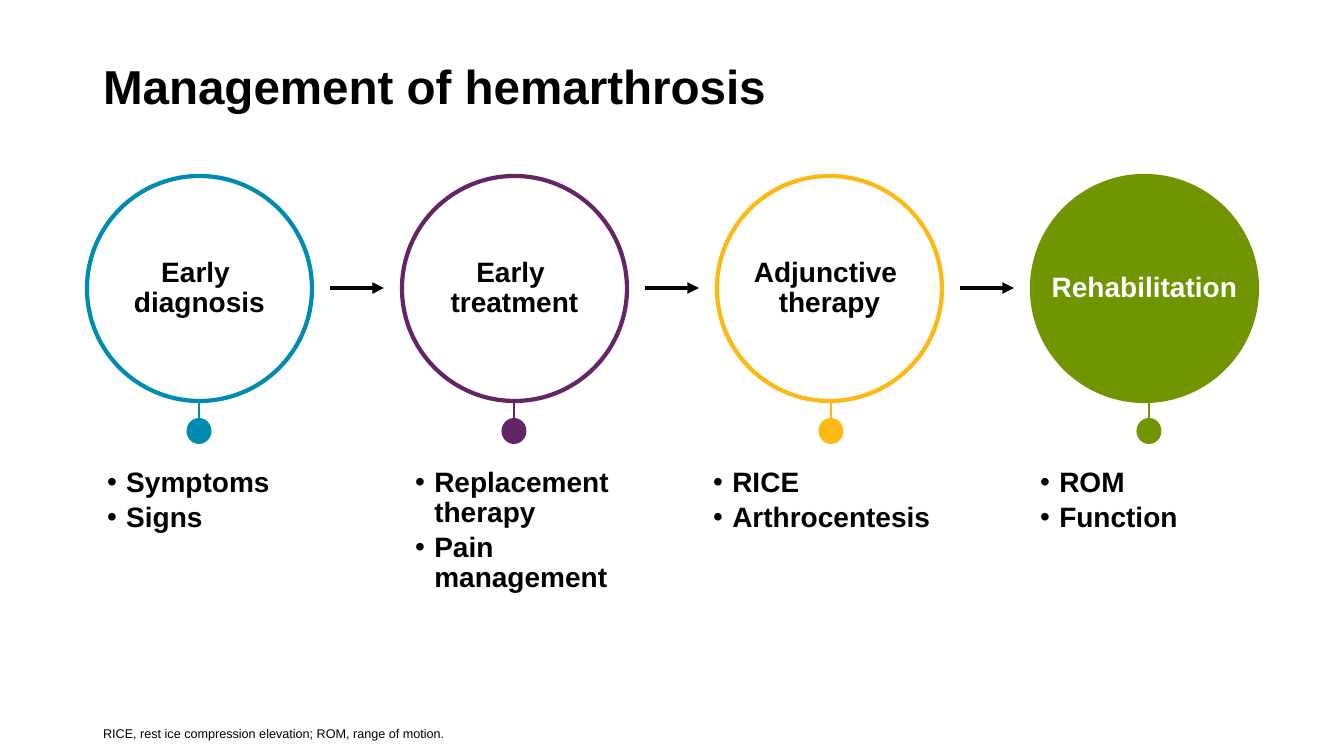
from lxml import etree
from pptx import Presentation
from pptx import util as u
from pptx.dml.color import RGBColor
from pptx.enum import shapes, text
from pptx.oxml.ns import qn

PX = 914400 / 100.8
BLACK = RGBColor(0x00, 0x00, 0x00)
WHITE = RGBColor(0xFF, 0xFF, 0xFF)
BLUE = RGBColor(0x00, 0x8B, 0xB0)
PURPLE = RGBColor(0x64, 0x25, 0x66)
YELLOW = RGBColor(0xFD, 0xB9, 0x13)
GREEN = RGBColor(0x71, 0x95, 0x00)

CIRCLE_LEFT, CIRCLE_TOP, CIRCLE_SIZE, STEP = 87, 176, 225, 315
DOT_TOP, DOT_WIDTH, DOT_HEIGHT = 418, 25, 26
LIST_TOP, LIST_HEIGHT = 454, 150
ARROW_START, ARROW_END, ARROW_Y = 330, 384, 288
INSET = u.Inches(0.14)

STEPS = [
    ("Early \vdiagnosis", BLUE, WHITE, BLACK, 199, 93, 225, ["Symptoms", "Signs"]),
    ("Early \vtreatment", PURPLE, WHITE, BLACK, 514, 401, 225,
     ["Replacement therapy", "Pain management"]),
    ("Adjunctive \vtherapy", YELLOW, WHITE, BLACK, 831, 699, 264,
     ["RICE", "Arthrocentesis"]),
    ("Rehabilitation", GREEN, GREEN, WHITE, 1149, 1026, 225, ["ROM", "Function"]),
]


def box(*lengths):
    return [u.Emu(round(length * PX)) for length in lengths]


def style(paragraph, size, bold, color, **layout):
    formats = {"size": u.Pt(size), "bold": bold, "name": "Arial"}
    for key, value in formats.items():
        setattr(paragraph.font, key, value)
    paragraph.font.color.rgb = color
    for key, value in layout.items():
        setattr(paragraph, key, value)


deck = Presentation()
deck.slide_width, deck.slide_height = box(1344, 756)
slide = deck.slides.add_slide(deck.slide_layouts[1])
title, footnote = slide.placeholders

for holder, words, place, size, bold, anchor in [
    (title, "Management of hemarthrosis", (93, 25, 1159, 120), 34, True,
     text.MSO_ANCHOR.MIDDLE),
    (footnote, "RICE, rest ice compression elevation; ROM, range of motion.",
     (93, 701, 1094, 40), 9, False, text.MSO_ANCHOR.BOTTOM),
]:
    holder.left, holder.top, holder.width, holder.height = box(*place)
    frame = holder.text_frame
    frame.text = words
    frame.auto_size = text.MSO_AUTO_SIZE.NONE
    frame.vertical_anchor = anchor
    props = frame.paragraphs[0]._p.get_or_add_pPr()
    props.set("marL", "0")
    props.set("indent", "0")
    etree.SubElement(props, qn("a:buNone"))
    style(frame.paragraphs[0], size, bold, color=BLACK,
          alignment=text.PP_ALIGN.LEFT, space_before=u.Pt(0))
footnote.text_frame.margin_bottom = 0

stems = [(center, 350, center, 430, color, 1.75, False)
         for _, color, _, _, center, *_ in STEPS]
arrows = [(ARROW_START + i * STEP, ARROW_Y, ARROW_END + i * STEP, ARROW_Y,
           BLACK, 2.75, True) for i in range(len(STEPS) - 1)]
for x1, y1, x2, y2, color, weight, pointed in stems + arrows:
    link = slide.shapes.add_connector(shapes.MSO_CONNECTOR.STRAIGHT,
                                      *box(x1, y1, x2, y2))
    link.line.color.rgb = color
    link.line.width = u.Pt(weight)
    if pointed:
        etree.SubElement(link.line._get_or_add_ln(), qn("a:tailEnd"), type="triangle")
    etree.SubElement(link._element.spPr, qn("a:effectLst"))

for i, (label, color, fill, ink, center, list_left, list_width, items) in enumerate(STEPS):
    circle = slide.shapes.add_shape(
        shapes.MSO_SHAPE.OVAL,
        *box(CIRCLE_LEFT + i * STEP, CIRCLE_TOP, CIRCLE_SIZE, CIRCLE_SIZE))
    dot = slide.shapes.add_shape(
        shapes.MSO_SHAPE.OVAL,
        *box(center - DOT_WIDTH / 2, DOT_TOP, DOT_WIDTH, DOT_HEIGHT))
    details = slide.shapes.add_shape(
        shapes.MSO_SHAPE.RECTANGLE, *box(list_left, LIST_TOP, list_width, LIST_HEIGHT))

    for part, inside, edge, weight in [(circle, fill, color, 3), (dot, color, None, 0),
                                       (details, WHITE, WHITE, 1)]:
        part.shadow.inherit = False
        part.fill.solid()
        part.fill.fore_color.rgb = inside
        if edge is None:
            part.line.fill.background()
        else:
            part.line.color.rgb = edge
            part.line.width = u.Pt(weight)

    for part, words, formats in [
        (circle, label, {"margin_left": 0, "margin_right": 0, "word_wrap": False,
                         "vertical_anchor": text.MSO_ANCHOR.MIDDLE}),
        (details, "\n".join(items), {"margin_left": INSET, "margin_right": INSET,
                                     "word_wrap": True,
                                     "vertical_anchor": text.MSO_ANCHOR.TOP}),
    ]:
        frame = part.text_frame
        frame.text = words
        frame.margin_top = frame.margin_bottom = INSET
        for key, value in formats.items():
            setattr(frame, key, value)

    style(circle.text_frame.paragraphs[0], 20, True, ink,
          alignment=text.PP_ALIGN.CENTER, line_spacing=0.9)
    for item in details.text_frame.paragraphs:
        props = item._p.get_or_add_pPr()
        props.set("marL", str(u.Inches(0.19)))
        props.set("indent", str(-u.Inches(0.19)))
        etree.SubElement(props, qn("a:buFont"), typeface="Arial")
        etree.SubElement(props, qn("a:buChar"), char="•")
        style(item, 20, True, BLACK, alignment=text.PP_ALIGN.LEFT,
              line_spacing=0.9, space_after=u.Pt(3.5))

deck.save("out.pptx")
